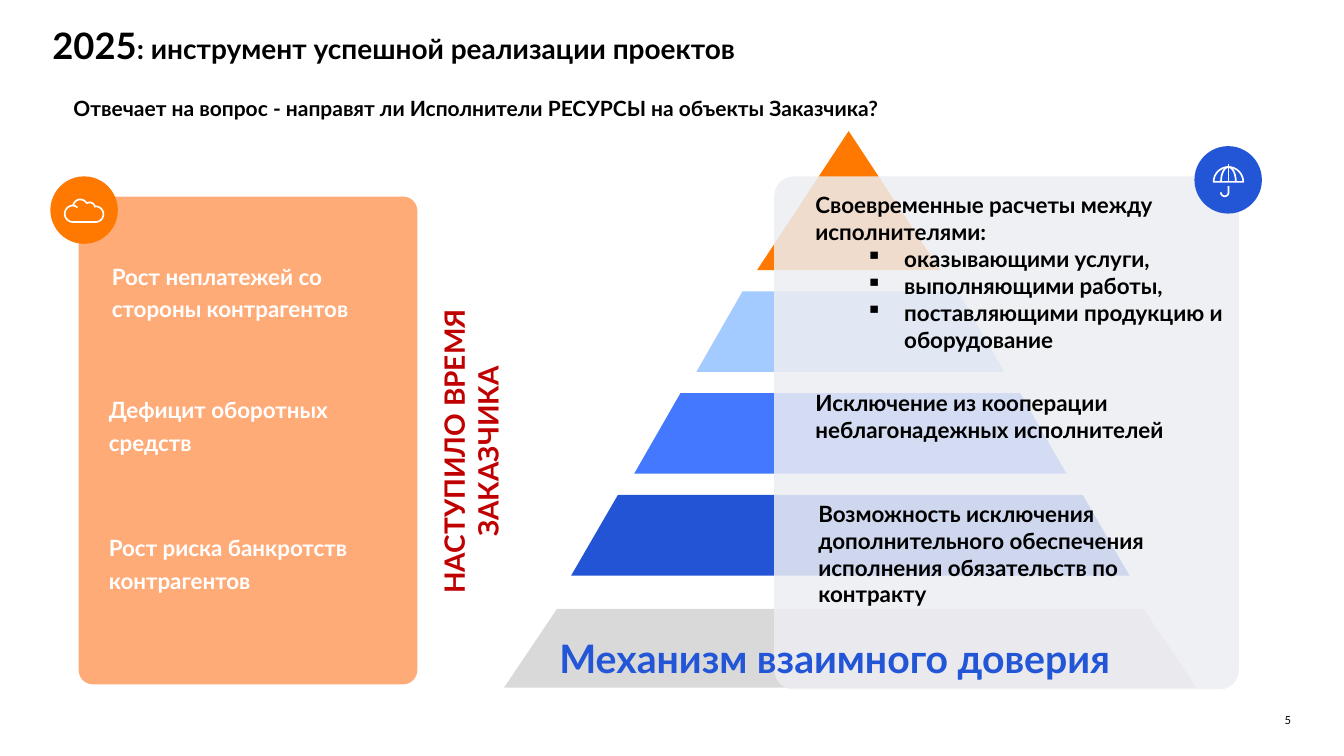
import math

from lxml import etree
from pptx import Presentation
from pptx.dml.color import RGBColor
from pptx.enum.shapes import MSO_CONNECTOR, MSO_SHAPE
from pptx.enum.text import MSO_ANCHOR, MSO_AUTO_SIZE, PP_ALIGN
from pptx.oxml.ns import qn
from pptx.util import Pt

LEFT, CENTER, RIGHT = PP_ALIGN.LEFT, PP_ALIGN.CENTER, PP_ALIGN.RIGHT
TOP, MIDDLE, BOTTOM = MSO_ANCHOR.TOP, MSO_ANCHOR.MIDDLE, MSO_ANCHOR.BOTTOM
ROUNDED, OVAL = MSO_SHAPE.ROUNDED_RECTANGLE, MSO_SHAPE.OVAL
FONT = "Lato"
HEX = {
    "black": "000000", "white": "FFFFFF", "orange": "FF7900", "peach": "FFAB78",
    "sky": "A3CBFF", "azure": "4478FF", "royal": "2354D6", "blue": "2355D7",
    "gray": "D9D9D9", "mist": "EDEEF2", "red": "C00000",
}
COLORS = {name: RGBColor.from_string(value) for name, value in HEX.items()}

presentation = Presentation()
presentation.slide_width, presentation.slide_height = Pt(960), Pt(540)
slide = presentation.slides.add_slide(presentation.slide_layouts[6])
shapes = slide.shapes


def add_text(text, left, top, width, height, size=16, color="black", bold=True,
             align=LEFT, anchor=TOP, line_spacing=None, space_after=None,
             margins=(0, 0), wrap=True, grow=False, rotation=0):
    """Add a text box; each line of the text becomes a paragraph."""
    box = shapes.add_textbox(Pt(left), Pt(top), Pt(width), Pt(height))
    box.rotation = rotation
    frame = box.text_frame
    frame.word_wrap = wrap
    frame.auto_size = MSO_AUTO_SIZE.SHAPE_TO_FIT_TEXT if grow else MSO_AUTO_SIZE.NONE
    frame.vertical_anchor = anchor
    frame.margin_left = frame.margin_right = Pt(margins[0])
    frame.margin_top = frame.margin_bottom = Pt(margins[1])
    for index, line in enumerate(text.split("\n")):
        paragraph = frame.add_paragraph() if index else frame.paragraphs[0]
        paragraph.text = line
        paragraph.alignment = align
        if line_spacing:
            paragraph.line_spacing = line_spacing
        if space_after:
            paragraph.space_after = Pt(space_after)
        for run in paragraph.runs:
            run.font.name, run.font.size, run.font.bold = FONT, Pt(size), bold
            run.font.color.rgb = COLORS[color]
    return frame


def add_stroke(arcs, close=False, weight=1.2):
    """Draw a white line through arcs: centre x, y, radius x, y, start and end degrees."""
    points = []
    for x, y, radius_x, radius_y, start, end in arcs:
        for step in range(17):
            angle = math.radians(start + (end - start) * step / 16)
            points.append((Pt(x + radius_x * math.cos(angle)),
                           Pt(y + radius_y * math.sin(angle))))
    builder = shapes.build_freeform(*points[0])
    builder.add_line_segments(points[1:], close=close)
    stroke = builder.convert_to_shape()
    stroke.shadow.inherit = False
    stroke.fill.background()
    stroke.line.color.rgb = COLORS["white"]
    stroke.line.width = Pt(weight)


# Pyramid: top, height, centre, half width at top and at bottom, color
tiers = [
    (93.6, 99.4, 606.2, 0, 65.5, "orange"),
    (208.1, 57.6, 607.4, 77, 110, "sky"),
    (280.8, 57.6, 607.4, 121.3, 154.4, "azure"),
    (353.5, 57.6, 607.4, 166, 199.4, "royal"),
    (434.9, 56.2, 607.4, 209.5, 247.3, "gray"),
]
for top, height, centre, half_top, half_bottom, color in tiers:
    bottom = top + height
    builder = shapes.build_freeform(Pt(centre - half_top), Pt(top))
    builder.add_line_segments([
        (Pt(centre + half_top), Pt(top)),
        (Pt(centre + half_bottom), Pt(bottom)),
        (Pt(centre - half_bottom), Pt(bottom)),
    ])
    tier = builder.convert_to_shape()
    tier.shadow.inherit = False
    tier.fill.solid()
    tier.fill.fore_color.rgb = COLORS[color]
    tier.line.fill.background()

# Panels and icon discs
areas = [
    (ROUNDED, 56.2, 140.4, 241.9, 348.5, "peach", None),
    (ROUNDED, 553, 126, 331.9, 366.5, "mist", 85),
    (OVAL, 36, 126, 48.2, 48.2, "orange", None),
    (OVAL, 853.2, 104.4, 48.2, 48.2, "blue", None),
]
for kind, left, top, width, height, color, opacity in areas:
    area = shapes.add_shape(kind, Pt(left), Pt(top), Pt(width), Pt(height))
    area.shadow.inherit = False
    area.fill.solid()
    area.fill.fore_color.rgb = COLORS[color]
    area.line.fill.background()
    if kind == ROUNDED:
        area.adjustments[0] = 0.042
    if opacity:
        fill_color = area.fill._xPr.find(qn("a:solidFill"))[0]
        etree.SubElement(fill_color, qn("a:alpha"), val=str(opacity * 1000))

# Cloud icon
add_stroke([
    (52.2, 152.7, 5.9, 5.9, 90, 270),
    (57.4, 147.6, 5.1, 5.1, 190, 325),
    (64.1, 148.4, 3.8, 3.8, 240, 350),
    (68.3, 153, 5.6, 5.6, 270, 450),
], close=True)
add_stroke([(52, 151, 4.2, 4.2, 270, 320)])

# Umbrella icon: dome, ribs, handle, shaft
add_stroke([(877.5, 129.9, 10.6, 10.6, 180, 360)], close=True)
add_stroke([(877.5, 129.9, 5.3, 10.6, 180, 360)])
add_stroke([(877.5, 132.9, 0, 0, 0, 0), (874.8, 137.5, 2.7, 2.7, 0, 180)])
shaft = shapes.add_connector(MSO_CONNECTOR.STRAIGHT, Pt(877.5), Pt(117), Pt(877.5), Pt(130))
shaft.line.color.rgb = COLORS["white"]
shaft.line.width = Pt(1.2)
etree.SubElement(shaft._element.spPr, qn("a:effectLst"))

# Title, question and slide number
title = add_text("2025", 37.4, 20.2, 731.5, 28.1, size=26, line_spacing=0.9, grow=True)
subject = title.paragraphs[0].add_run()
subject.text = ": инструмент успешной реализации проектов"
subject.font.name, subject.font.size, subject.font.bold = FONT, Pt(20), True
subject.font.color.rgb = COLORS["black"]
add_text("Отвечает на вопрос - направят ли Исполнители РЕСУРСЫ на объекты Заказчика?",
         45.4, 56.2, 821.5, 41.8, size=15, anchor=MIDDLE, margins=(7.2, 3.6))
add_text("5", 881.3, 509.8, 41, 9.4, size=8, bold=False, align=RIGHT, anchor=BOTTOM, grow=True)

# Risks
risks = [
    ("Рост неплатежей со стороны контрагентов", 79.9, 184.3),
    ("Дефицит оборотных средств", 77.8, 279.4),
    ("Рост риска банкротств контрагентов", 77.8, 378),
]
for risk, left, top in risks:
    add_text(risk, left, top, 205.9, 85.7, color="white", line_spacing=1.2, space_after=18)

# Benefits
payments = add_text(
    "Своевременные расчеты между исполнителями:\nоказывающими услуги,\n"
    "выполняющими работы,\nпоставляющими продукцию и оборудование",
    582.5, 136.8, 292.3, 98.6)
for paragraph in payments.paragraphs[1:]:
    paragraph.level = 1
    properties = paragraph._p.get_or_add_pPr()
    properties.set("marL", str(Pt(63.4)))
    properties.set("indent", str(Pt(-27.4)))
    etree.SubElement(properties, qn("a:buChar"), char="▪")
add_text("Исключение из кооперации неблагонадежных исполнителей", 582.5, 277.9, 292.3, 98.6)
add_text("Возможность исключения дополнительного обеспечения исполнения обязательств по контракту",
         584.6, 357.1, 290.9, 98.6)

# Slogans
add_text("Механизм взаимного доверия", 399.6, 446.4, 439.2, 41, size=28, color="blue",
         line_spacing=1.2, grow=True)
add_text("НАСТУПИЛО ВРЕМЯ\vЗАКАЗЧИКА", 157, 306.7, 334.8, 31.7, size=20, color="red",
         align=CENTER, margins=(7.2, 3.6), wrap=False, grow=True, rotation=270)

presentation.save("out.pptx")
